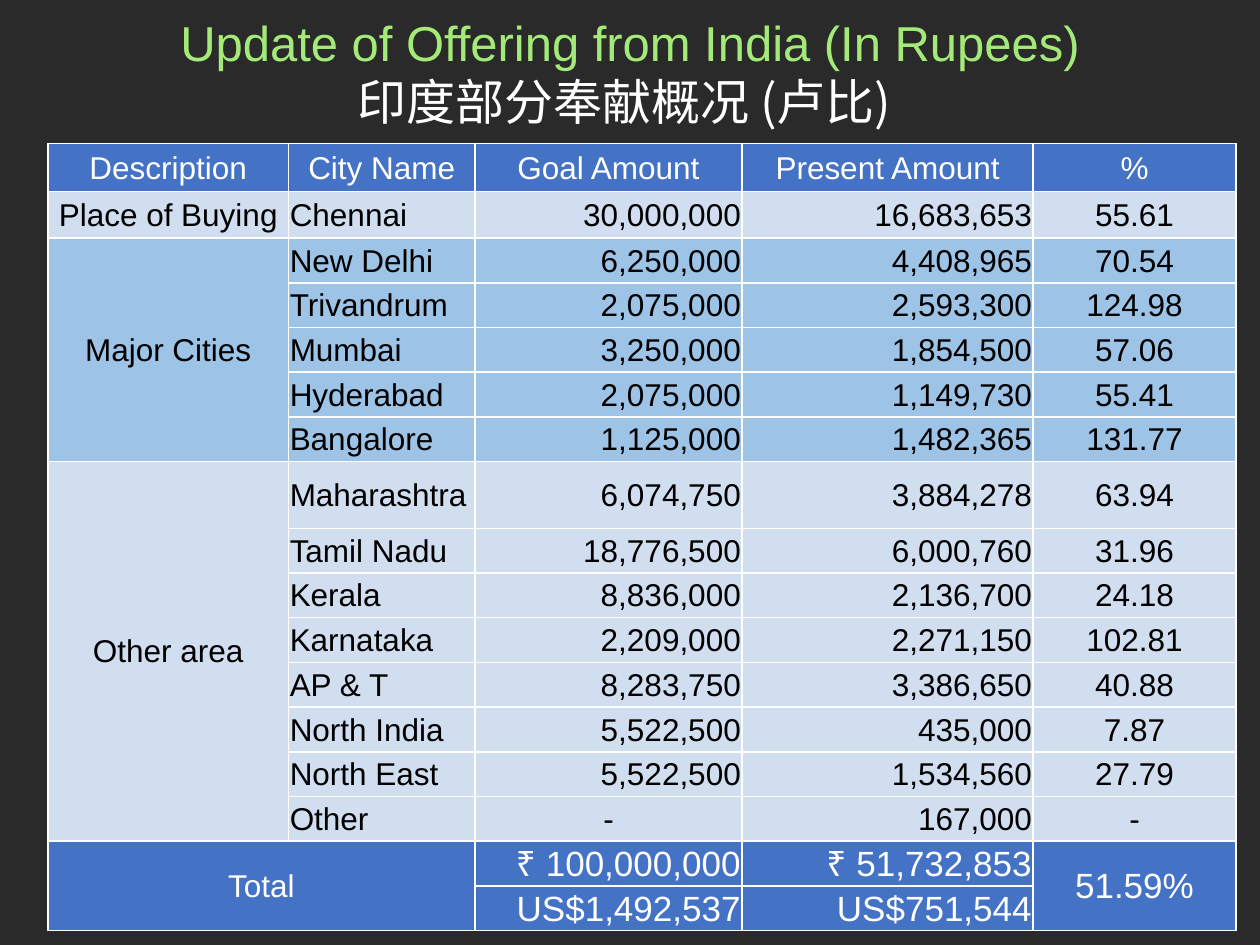
import pptx
import pptx.dml.color
import pptx.enum.text
import pptx.oxml
import pptx.oxml.ns
import pptx.util

Inches = pptx.util.Inches
ALIGN = pptx.enum.text.PP_ALIGN
MIDDLE = pptx.enum.text.MSO_ANCHOR.MIDDLE

# Content
TITLE = ["Update of Offering from India (In Rupees)", "印度部分奉献概况 (卢比) "]
HEADER = ["Description", "City Name", "Goal Amount", "Present Amount", "%"]
GROUPS = [
    ("Place of Buying", "light", [
        ("Chennai", "30,000,000", "16,683,653", "55.61"),
    ]),
    ("Major Cities", "medium", [
        ("New Delhi", "6,250,000", "4,408,965", "70.54"),
        ("Trivandrum", "2,075,000", "2,593,300", "124.98"),
        ("Mumbai", "3,250,000", "1,854,500", "57.06"),
        ("Hyderabad", "2,075,000", "1,149,730", "55.41"),
        ("Bangalore", "1,125,000", "1,482,365", "131.77"),
    ]),
    ("Other area", "light", [
        ("Maharashtra", "6,074,750", "3,884,278", "63.94"),
        ("Tamil Nadu", "18,776,500", "6,000,760", "31.96"),
        ("Kerala", "8,836,000", "2,136,700", "24.18"),
        ("Karnataka", "2,209,000", "2,271,150", "102.81"),
        ("AP & T", "8,283,750", "3,386,650", "40.88"),
        ("North India", "5,522,500", "435,000", "7.87"),
        ("North East", "5,522,500", "1,534,560", "27.79"),
        ("Other", "-", "167,000", "-"),
    ]),
]
TOTAL_LABEL, TOTAL_SHARE = "Total", "51.59%"
TOTALS = [("₹ 100,000,000", "₹ 51,732,853"), ("US$1,492,537", "US$751,544")]

THEME = {
    "background": "2A2A2A", "title": "A4EA78", "white": "FFFFFF", "black": "000000",
    "strong": "4472C4", "medium": "9DC3E6", "light": "D0DEEF",
    "font": "Arial", "chinese_font": "Noto Sans CJK SC",
    "title_size": 28, "body_size": 18, "total_size": 20, "border": 1,
}

# Layout in inches
PAGE_WIDTH, PAGE_HEIGHT = 10, 7.5
TITLE_HEIGHT = 1.14
TABLE_LEFT, TABLE_HEIGHT = 0.38, 6.25
COLUMNS = [1.91, 1.48, 2.12, 2.31, 1.61]
SPECIAL_ROWS = {0: 0.38, 1: 0.37, 7: 0.53}  # the other rows share what is left
COLUMN_ALIGN = [ALIGN.CENTER, ALIGN.LEFT, ALIGN.RIGHT, ALIGN.RIGHT, ALIGN.CENTER]


def color(name):
    return pptx.dml.color.RGBColor.from_string(THEME[name])


def add_text(para, text, *, size="body_size", ink="black", font="font", align=ALIGN.CENTER):
    para.alignment = align
    span = para.add_run()
    span.text = text
    span.font.size = pptx.util.Pt(THEME[size])
    span.font.color.rgb = color(ink)
    span.font.name = THEME[font]
    east_asian = pptx.oxml.parse_xml(
        f'<a:ea {pptx.oxml.ns.nsdecls("a")} typeface="{THEME[font]}"/>')
    span.font._element.find(pptx.oxml.ns.qn("a:latin")).addnext(east_asian)


def add_borders(cell):
    properties = cell._tc.get_or_add_tcPr()
    for index, side in enumerate(("lnL", "lnR", "lnT", "lnB")):
        properties.insert(index, pptx.oxml.parse_xml(
            f'<a:{side} {pptx.oxml.ns.nsdecls("a")} w="{pptx.util.Pt(THEME["border"])}">'
            f'<a:solidFill><a:srgbClr val="{THEME["white"]}"/></a:solidFill></a:{side}>'))


def fill_cell(table, row, column, text, fill, **text_format):
    cell = table.cell(row, column)
    cell.fill.solid()
    cell.fill.fore_color.rgb = color(fill)
    if text:
        add_text(cell.text_frame.paragraphs[0], text, **text_format)


def add_title(page):
    box = page.shapes.add_textbox(0, 0, Inches(PAGE_WIDTH), Inches(TITLE_HEIGHT))
    frame = box.text_frame
    frame.word_wrap = True
    frame.vertical_anchor = MIDDLE
    frame.margin_left = frame.margin_right = Inches(0.05)
    frame.margin_top = frame.margin_bottom = Inches(0.05)
    para = frame.paragraphs[0]
    add_text(para, TITLE[0], size="title_size", ink="title")
    para.add_line_break()
    add_text(para, TITLE[1], size="title_size", ink="white", font="chinese_font")


def add_offering_table(page):
    row_count = 1 + sum(len(cities) for _, _, cities in GROUPS) + len(TOTALS)
    table = page.shapes.add_table(
        row_count, len(COLUMNS), Inches(TABLE_LEFT), Inches(TITLE_HEIGHT),
        Inches(sum(COLUMNS)), Inches(TABLE_HEIGHT)).table
    for column, width in zip(table.columns, COLUMNS):
        column.width = Inches(width)
    shared = (TABLE_HEIGHT - sum(SPECIAL_ROWS.values())) / (row_count - len(SPECIAL_ROWS))
    for index, row in enumerate(table.rows):
        row.height = Inches(SPECIAL_ROWS.get(index, shared))
    for cell in table.iter_cells():
        cell.vertical_anchor = MIDDLE
        cell.margin_left = cell.margin_right = cell.margin_top = Inches(0.01)
        cell.margin_bottom = 0
        add_borders(cell)

    # Header
    for column, text in enumerate(HEADER):
        fill_cell(table, 0, column, text, "strong", ink="white")

    # City groups
    row = 1
    for label, fill, cities in GROUPS:
        first = row
        for city in cities:
            values = (label if row == first else "",) + city
            for column, text in enumerate(values):
                align = ALIGN.CENTER if text == "-" else COLUMN_ALIGN[column]
                fill_cell(table, row, column, text, fill, align=align)
            row += 1
        if len(cities) > 1:
            table.cell(first, 0).merge(table.cell(row - 1, 0))

    # Totals
    last = row_count - 1
    for index, amounts in enumerate(TOTALS, row):
        for column, text in enumerate(amounts, 2):
            fill_cell(table, index, column, text, "strong", size="total_size",
                      ink="white", align=ALIGN.RIGHT)
    fill_cell(table, row, 0, TOTAL_LABEL, "strong", ink="white")
    fill_cell(table, row, 4, TOTAL_SHARE, "strong", size="total_size", ink="white")
    table.cell(row, 0).merge(table.cell(last, 1))
    table.cell(row, 4).merge(table.cell(last, 4))


def main():
    deck = pptx.Presentation()
    deck.slide_width, deck.slide_height = Inches(PAGE_WIDTH), Inches(PAGE_HEIGHT)
    page = deck.slides.add_slide(deck.slide_layouts[6])
    page.background.fill.solid()
    page.background.fill.fore_color.rgb = color("background")
    add_title(page)
    add_offering_table(page)
    deck.save("out.pptx")


if __name__ == "__main__":
    main()
